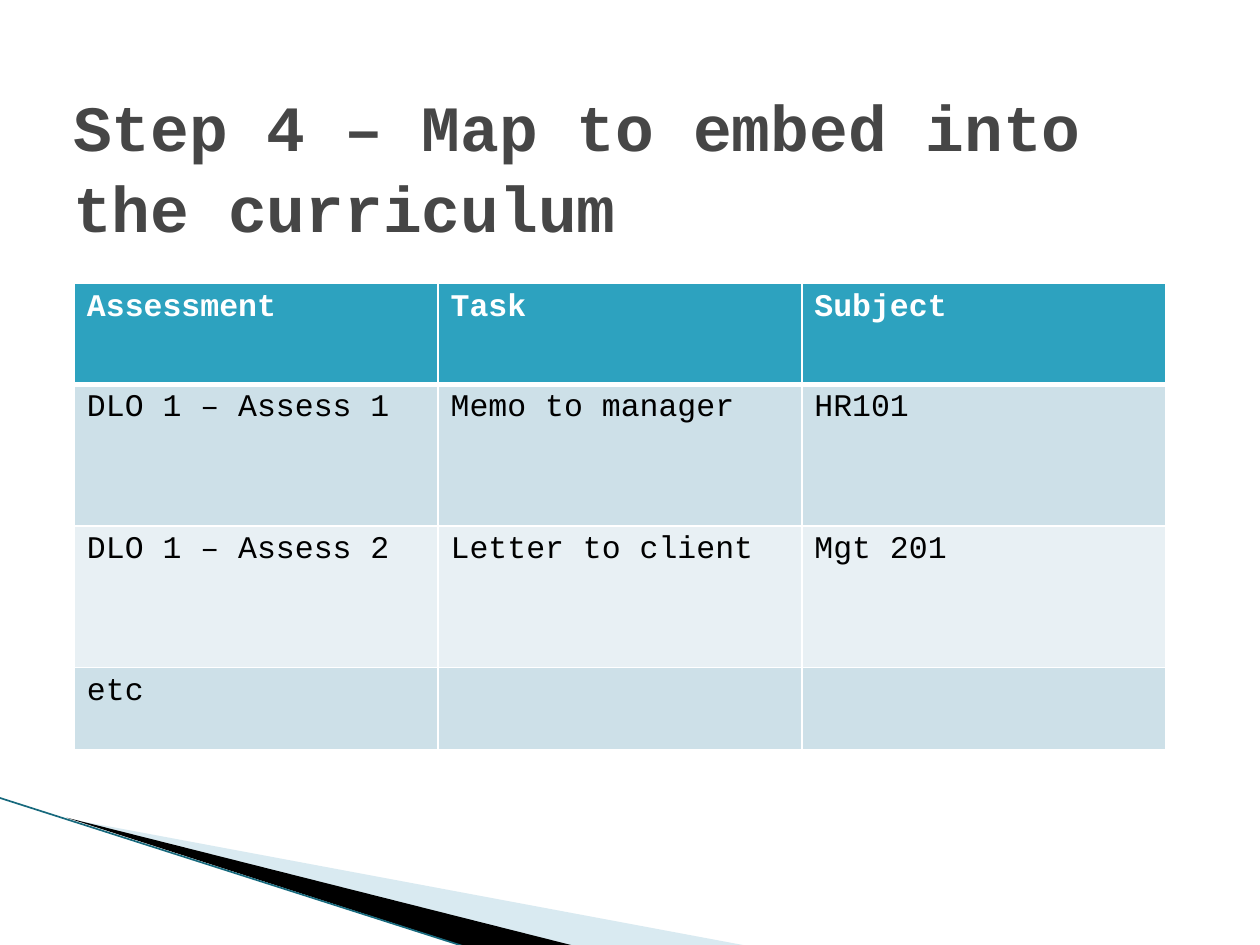
"""Build the slide that maps assessments to tasks and subjects."""
from lxml.etree import SubElement
from pptx import Presentation
from pptx.dml.color import RGBColor
from pptx.enum.shapes import MSO_CONNECTOR
from pptx.enum.text import MSO_ANCHOR, MSO_AUTO_SIZE
from pptx.oxml import parse_xml
from pptx.oxml.ns import nsdecls, qn
from pptx.util import Inches, Pt

COLUMNS, ROWS = 100, 75
WIDTH, HEIGHT = Inches(10), Inches(7.5)
FONT = "Courier New"
COLORS = {
    "title": "464646",
    "header": "2DA2BF",
    "band": "CDE0E8",
    "light": "E8F0F4",
    "white": "FFFFFF",
    "black": "000000",
    "wedge": "A0CBDC",
    "edge": "17697D",
}
ASSESSMENTS = [
    ("Assessment", "Task", "Subject"),
    ("DLO 1 – Assess 1", "Memo to manager", "HR101"),
    ("DLO 1 – Assess 2", "Letter to client", "Mgt 201"),
    ("etc", "", ""),
]
ROW_HEIGHTS = (8, 11.25, 11.25, 6.5)


def across(columns):
    """Return the width of a number of grid columns."""
    return round(WIDTH * columns / COLUMNS)


def down(rows):
    """Return the height of a number of grid rows."""
    return round(HEIGHT * rows / ROWS)


def rgb(name):
    """Return a named colour."""
    return RGBColor.from_string(COLORS[name])


def write(frame, text, size=18, color="black", bold=False, spacing=None):
    """Put formatted text into a text frame."""
    frame.text = text
    paragraph = frame.paragraphs[0]
    paragraph.line_spacing = spacing
    font = paragraph.font
    font.name, font.size, font.bold = FONT, Pt(size), bold
    font.color.rgb = rgb(color)


def add_wedge(slide, points, color, opacity=100):
    """Draw a filled outline through grid points."""
    corners = [(across(x), down(y)) for x, y in points]
    builder = slide.shapes.build_freeform(*corners[0])
    builder.add_line_segments(corners[1:], close=True)
    wedge = builder.convert_to_shape()
    wedge.shadow.inherit = False
    wedge.line.fill.background()
    wedge.fill.solid()
    wedge.fill.fore_color.rgb = rgb(color)
    if opacity < 100:
        tint = wedge.fill._xPr.find(".//" + qn("a:srgbClr"))
        SubElement(tint, qn("a:alpha")).set("val", str(opacity * 1000))


def add_edge(slide, start, end, color, weight):
    """Draw a straight line between two grid points."""
    edge = slide.shapes.add_connector(
        MSO_CONNECTOR.STRAIGHT,
        across(start[0]), down(start[1]), across(end[0]), down(end[1]),
    )
    edge.line.color.rgb = rgb(color)
    edge.line.width = Pt(weight)
    SubElement(edge._element.spPr, qn("a:effectLst"))


def set_borders(cell, weights):
    """Give a cell white borders, in points, for each side."""
    properties = cell._tc.get_or_add_tcPr()
    for position, (side, weight) in enumerate(weights.items()):
        properties.insert(position, parse_xml(
            f'<a:ln{side} {nsdecls("a")} w="{Pt(weight)}"><a:solidFill>'
            f'<a:srgbClr val="{COLORS["white"]}"/></a:solidFill></a:ln{side}>'
        ))


def add_title(slide, text):
    """Place and fill the title."""
    title = slide.shapes.title
    title.left, title.top = across(4.8), down(6.8)
    title.width, title.height = across(90), down(12.5)
    frame = title.text_frame
    frame.word_wrap = True
    frame.auto_size = MSO_AUTO_SIZE.NONE
    frame.vertical_anchor = MSO_ANCHOR.MIDDLE
    write(frame, text, size=36.9, color="title", bold=True, spacing=1.05)
    frame.paragraphs[0].alignment = 1


def add_assessments(slide):
    """Add the table of assessments with a header and banded rows."""
    table = slide.shapes.add_table(
        len(ASSESSMENTS), len(ASSESSMENTS[0]),
        across(5.9), down(22.5), across(86.6), down(sum(ROW_HEIGHTS)),
    ).table
    for index, (texts, height) in enumerate(zip(ASSESSMENTS, ROW_HEIGHTS)):
        table.rows[index].height = down(height)
        header = index == 0
        fill = "header" if header else "band" if index % 2 else "light"
        top, bottom = 3 if index == 1 else 1, 3 if header else 1
        for column, text in enumerate(texts):
            cell = table.cell(index, column)
            cell.fill.solid()
            cell.fill.fore_color.rgb = rgb(fill)
            set_borders(cell, {"L": 1, "R": 1, "T": top, "B": bottom})
            write(cell.text_frame, text, bold=header,
                  color="white" if header else "black")


def main():
    """Build and save the slide."""
    deck = Presentation()
    deck.slide_width, deck.slide_height = WIDTH, HEIGHT
    slide = deck.slides.add_slide(deck.slide_layouts[5])
    add_wedge(slide, [(5.5, 65), (59.5, 75.1), (45.6, 75.1)], "wedge", opacity=40)
    add_wedge(slide, [(5.3, 64.9), (45.7, 75.1), (37.2, 75.2)], "black")
    add_edge(slide, (-0.1, 63.3), (37.1, 75.2), "edge", 0.95)
    add_title(slide, "Step 4 – Map to embed into the curriculum")
    add_assessments(slide)
    deck.save("out.pptx")


if __name__ == "__main__":
    main()
